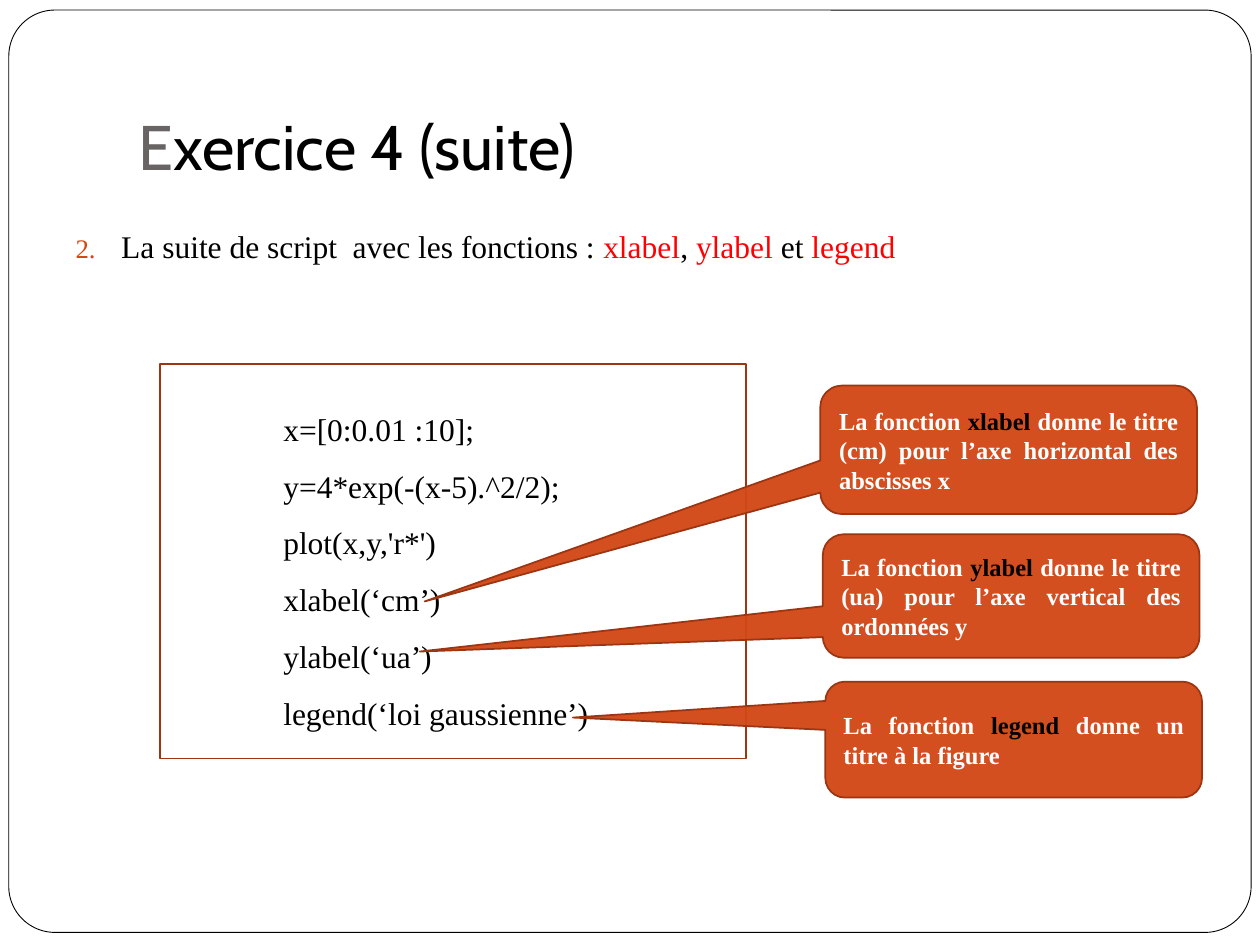
from lxml.etree import SubElement
from pptx import Presentation
from pptx.dml.color import RGBColor
from pptx.enum.shapes import MSO_SHAPE as SHAPE
from pptx.enum.text import MSO_ANCHOR, MSO_AUTO_SIZE, PP_ALIGN
from pptx.oxml.ns import qn
from pptx.util import Inches, Pt

COLS, ROWS = 100, 75
INK = {"black": "000000", "white": "FFFFFF", "gray": "696464",
       "red": "FF0000", "orange": "D34817", "rust": "9C3511"}
SERIF = "Times New Roman"


class Deck:
    """Holds the style and the current slide, laid out on a 100 x 75 grid."""

    def __init__(self):
        self.prs = Presentation()
        self.prs.slide_width, self.prs.slide_height = Inches(10), Inches(7.5)
        self.slide = self.prs.slides.add_slide(self.prs.slide_layouts[1])
        self.wide = self.prs.slide_width / COLS
        self.high = self.prs.slide_height / ROWS

    def place(self, shape, box):
        names = ("left", "top", "width", "height")
        units = (self.wide, self.high) * 2
        for name, val, unit in zip(names, box, units):
            setattr(shape, name, round(val * unit))

    def frame(self, shape, **form):
        form = {"word_wrap": True, "auto_size": MSO_AUTO_SIZE.NONE, **form}
        for name, val in form.items():
            setattr(shape.text_frame, name, val)
        return shape.text_frame

    def fill_in(self, para, parts, font, **form):
        for name, val in form.items():
            setattr(para, name, val)
        for text, ink in parts:
            run = para.add_run()
            run.text = text
            for name, val in font.items():
                setattr(run.font, name, val)
            run.font.color.rgb = RGBColor.from_string(INK[ink])

    def title(self, box, parts):
        shape = self.slide.shapes.title
        self.place(shape, box)
        text = self.frame(shape, vertical_anchor=MSO_ANCHOR.BOTTOM,
                          margin_bottom=Inches(0.1))
        self.fill_in(text.paragraphs[0], parts,
                     {"name": "Cabin", "size": Pt(36)},
                     alignment=PP_ALIGN.LEFT)

    def item(self, box, parts, start):
        shape = self.slide.placeholders[1]
        self.place(shape, box)
        para = self.frame(shape).paragraphs[0]
        self.fill_in(para, parts, {"name": SERIF, "size": Pt(18)},
                     alignment=PP_ALIGN.JUSTIFY, space_before=Pt(5.8))
        # Coloured automatic number with a hanging indent
        prop = para._p.get_or_add_pPr()
        prop.set("marL", str(Inches(0.3)))
        prop.set("indent", str(-Inches(0.3)))
        tint = SubElement(prop, qn("a:buClr"))
        SubElement(tint, qn("a:srgbClr"), val=INK["orange"])
        SubElement(prop, qn("a:buSzPct"), val="85000")
        SubElement(prop, qn("a:buFont"), typeface=SERIF)
        SubElement(prop, qn("a:buAutoNum"), type="arabicPeriod",
                   startAt=str(start))

    def shape(self, kind, box, fill, line, width, adj=()):
        shape = self.slide.shapes.add_shape(kind, 0, 0, 0, 0)
        self.place(shape, box)
        shape.shadow.inherit = False
        for i, val in enumerate(adj):
            shape.adjustments[i] = val
        if fill:
            shape.fill.solid()
            shape.fill.fore_color.rgb = RGBColor.from_string(INK[fill])
        else:
            shape.fill.background()
        shape.line.color.rgb = RGBColor.from_string(INK[line])
        shape.line.width = Pt(width)
        return shape

    def border(self, box):
        shape = self.shape(SHAPE.ROUNDED_RECTANGLE, box, "white", "black",
                           0.5, [0.05])
        self.slide.shapes._spTree.insert(2, shape._element)

    def code(self, box, lines):
        shape = self.shape(SHAPE.RECTANGLE, box, None, "rust", 1)
        text = self.frame(shape, vertical_anchor=MSO_ANCHOR.MIDDLE)
        for i, line in enumerate(lines):
            para = text.add_paragraph() if i else text.paragraphs[0]
            self.fill_in(para, [(line, "black")],
                         {"name": SERIF, "size": Pt(18)}, level=1,
                         alignment=PP_ALIGN.LEFT, line_spacing=1.5)
            prop = para._p.get_or_add_pPr()
            prop.set("marL", str(Inches(0.88)))
            prop.set("indent", "0")

    def note(self, box, tip, word, rest):
        shape = self.shape(SHAPE.ROUNDED_RECTANGULAR_CALLOUT, box, "orange",
                           "rust", 1, [*tip, 0.17])
        tint = shape._element.spPr.find(qn("a:solidFill"))[0]
        SubElement(tint, qn("a:alpha"), val="96000")
        text = self.frame(shape, vertical_anchor=MSO_ANCHOR.MIDDLE)
        parts = [("La fonction ", "white"), (word + " ", "black"),
                 (rest, "white")]
        self.fill_in(text.paragraphs[0], parts,
                     {"name": SERIF, "size": Pt(14), "bold": True},
                     alignment=PP_ALIGN.JUSTIFY)


def main():
    deck = Deck()

    # Page border and heading
    deck.border((0.7, 0.8, 98.6, 73.2))
    deck.title((10, 3, 85, 12.5),
               [("E", "gray"), ("xercice 4 (suite)", "black")])

    # Numbered task
    deck.item((5, 17.5, 90, 21.6), [
        (" La suite de script  avec les fonctions : ", "black"),
        ("xlabel", "red"), (", ", "black"), ("ylabel ", "red"),
        ("et ", "black"), ("legend", "red")], start=2)

    # Script
    deck.code((12.7, 28.9, 46.5, 31.3), [
        "x=[0:0.01 :10];", "y=4*exp(-(x-5).^2/2);", "plot(x,y,'r*')",
        "xlabel(‘cm’)", "ylabel(‘ua’)", "legend(‘loi gaussienne’)"])

    # Callouts: top, height, pointer tip, function, text
    notes = [
        (30.6, 10.2, (-1.55, 1.18), "xlabel",
         "donne le titre (cm) pour l’axe horizontal des abscisses x"),
        (42.4, 9.8, (-1.57, 0.45), "ylabel",
         "donne le titre (ua) pour l’axe vertical des ordonnées y "),
        (54.1, 9.2, (-1.17, -0.19), "legend", "donne un titre à la figure")]
    for i, (top, high, tip, word, rest) in enumerate(notes):
        deck.note((65.1 + 0.2 * i, top, 29.9, high), tip, word, rest)

    deck.prs.save("out.pptx")


if __name__ == "__main__":
    main()
